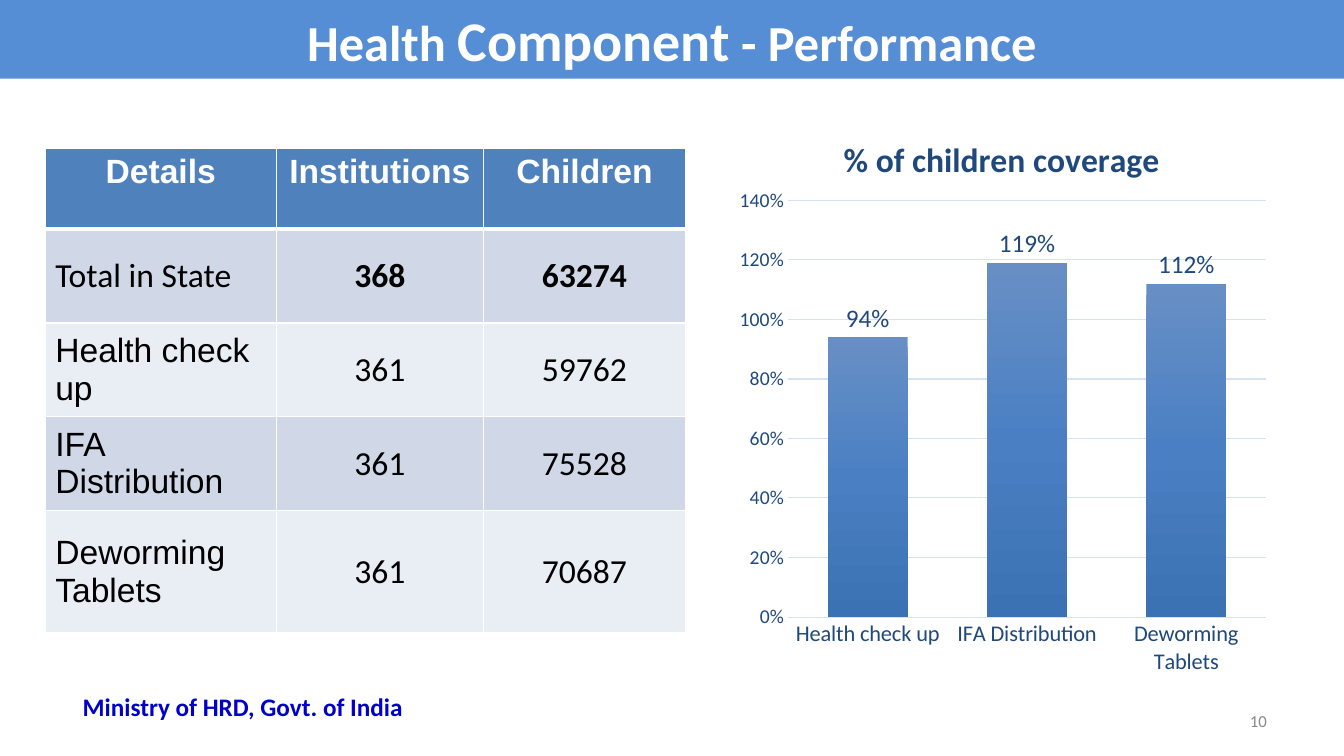
from dataclasses import dataclass
from lxml import etree
from pptx import Presentation
from pptx.chart.data import CategoryChartData
from pptx.dml.color import RGBColor
from pptx.enum.chart import XL_CHART_TYPE, XL_LABEL_POSITION, XL_TICK_MARK
from pptx.enum.text import MSO_ANCHOR, PP_ALIGN
from pptx.oxml import parse_xml
from pptx.oxml.ns import nsdecls, qn
from pptx.util import Cm, Pt

LEFT, CENTER, RIGHT = PP_ALIGN.LEFT, PP_ALIGN.CENTER, PP_ALIGN.RIGHT
TOP, MIDDLE = MSO_ANCHOR.TOP, MSO_ANCHOR.MIDDLE
COLUMN = XL_CHART_TYPE.COLUMN_CLUSTERED
OUTSIDE = XL_LABEL_POSITION.OUTSIDE_END
NO_TICK = XL_TICK_MARK.NONE


@dataclass(frozen=True)
class Theme:
    sans: str = "Calibri"
    arial: str = "Arial"
    white: str = "FFFFFF"
    black: str = "000000"
    banner: str = "558ED5"
    head: str = "4F81BD"
    bands: tuple = ("D0D8E8", "E9EDF4")
    navy: str = "1F497D"
    grid: str = "D4E3F4"
    blue: str = "0000CC"
    gray: str = "898989"
    ramp: tuple = ("688FC5", "4A80C3", "3B72B3")
    title: int = 36
    big: int = 40
    body: int = 24
    label: int = 18
    cat: int = 16
    tick: int = 14
    page: int = 12


T = Theme()
HEADS = ("Details", "Institutions", "Children")
ROWS = (
    ("Total in State", "368", "63274"),
    ("Health check up", "361", "59762"),
    ("IFA Distribution", "361", "75528"),
    ("Deworming Tablets", "361", "70687"),
)
SHARES = (0.94, 1.19, 1.12)


def rgb(code):
    return RGBColor.from_string(code)


def style(font, size, color, face=T.sans, bold=False):
    font.size, font.name, font.bold = Pt(size), face, bold
    font.color.rgb = rgb(color)


def add_run(para, text, *look, **more):
    run = para.add_run()
    run.text = text
    style(run.font, *look, **more)


def set_box(shape, box):
    shape.left, shape.top, shape.width, shape.height = map(Cm, box)


def add_banner(slide, box):
    title = slide.shapes.title
    set_box(title, box)
    title.fill.solid()
    title.fill.fore_color.rgb = rgb(T.banner)
    title.text_frame.vertical_anchor = MIDDLE
    para = title.text_frame.paragraphs[0]
    para.alignment = CENTER
    for text, size in (("Health ", T.title), ("Component", T.big),
                       (" - Performance", T.title)):
        add_run(para, text, size, T.white, bold=True)


def add_note(slide, box, text, align, anchor, *look, **more):
    frame = slide.shapes.add_textbox(*map(Cm, box)).text_frame
    frame.word_wrap = True
    frame.vertical_anchor = anchor
    para = frame.paragraphs[0]
    para.alignment = align
    add_run(para, text, *look, **more)


def add_edges(cell, foot):
    props = cell._tc.get_or_add_tcPr()
    widths = {"L": 1, "R": 1, "T": 1, "B": foot}
    for at, (side, width) in enumerate(widths.items()):
        props.insert(at, parse_xml(
            f'<a:ln{side} {nsdecls("a")} w="{Pt(width)}"><a:solidFill>'
            f'<a:srgbClr val="{T.white}"/></a:solidFill></a:ln{side}>'))


def fill_cell(cell, text, row, col):
    head, first = row == 0, col == 0
    cell.fill.solid()
    cell.fill.fore_color.rgb = rgb(T.head if head else T.bands[(row - 1) % 2])
    cell.vertical_anchor = TOP if head else MIDDLE
    if not head and not first:
        cell.margin_left = cell.margin_right = cell.margin_top = Cm(0.02)
        cell.margin_bottom = 0
    para = cell.text_frame.paragraphs[0]
    para.alignment = CENTER if head or not first else LEFT
    arial = head or (first and row > 1)
    add_run(para, text, T.body, T.white if head else T.black,
            face=T.arial if arial else T.sans,
            bold=head or (row == 1 and not first))
    add_edges(cell, 3 if row < 1 else 1)


def add_grid(slide, box):
    data = (HEADS,) + ROWS
    table = slide.shapes.add_table(len(data), len(HEADS), *map(Cm, box)).table
    for col, width in zip(table.columns, (5.82, 5.23, 5.08)):
        col.width = Cm(width)
    for row, height in zip(table.rows, (2.05, 2.36, 2.36, 2.36, 3.09)):
        row.height = Cm(height)
    for r, line in enumerate(data):
        for c, text in enumerate(line):
            fill_cell(table.cell(r, c), text, r, c)


def place(node, x, y, w=None, h=None, inner=False):
    """Give a chart part a fixed place, as shares of the chart."""
    for old in node.findall(qn("c:layout")):
        node.remove(old)
    layout = parse_xml(f'<c:layout {nsdecls("c")}><c:manualLayout/></c:layout>')
    parts = [("layoutTarget", "inner")] if inner else []
    parts += [("xMode", "edge"), ("yMode", "edge"), ("x", x), ("y", y)]
    parts += [("w", w), ("h", h)] if w else []
    for tag, val in parts:
        etree.SubElement(layout[0], qn("c:" + tag)).set("val", str(val))
    text = node.find(qn("c:tx"))
    node.insert(0 if text is None else 1, layout)


def shade(series):
    series.format.fill.gradient()
    stops = "".join(f'<a:gs pos="{i * 50000}"><a:srgbClr val="{c}"/></a:gs>'
                    for i, c in enumerate(T.ramp))
    props = series._element.spPr
    props.replace(props.find(qn("a:gradFill")), parse_xml(
        f'<a:gradFill {nsdecls("a")} rotWithShape="1"><a:gsLst>{stops}</a:gsLst>'
        '<a:lin ang="5400000" scaled="0"/></a:gradFill>'))


def add_bars(slide, box):
    data = CategoryChartData(number_format="0%")
    data.categories = [row[0] for row in ROWS[1:]]
    data.add_series("Series 1", SHARES)
    chart = slide.shapes.add_chart(COLUMN, *map(Cm, box), data).chart
    style(chart.font, T.tick, T.navy)
    chart.has_legend = False

    # Title
    chart.has_title = True
    title = chart.chart_title
    title.include_in_layout = False
    add_run(title.text_frame.paragraphs[0], "% of children coverage",
            T.body, T.navy, bold=True)
    place(title._element, 0.2, 0.04)

    # Axes
    cats, vals = chart.category_axis, chart.value_axis
    for axis, size in ((cats, T.cat), (vals, T.tick)):
        axis.major_tick_mark = axis.minor_tick_mark = NO_TICK
        style(axis.tick_labels.font, size, T.navy)
    vals.minimum_scale, vals.maximum_scale, vals.major_unit = 0, 1.4, 0.2
    vals.tick_labels.number_format = "0%"
    vals.tick_labels.number_format_is_linked = False
    vals.format.line.fill.background()
    vals.has_major_gridlines = True
    for line in (cats.format.line, vals.major_gridlines.format.line):
        line.color.rgb = rgb(T.grid)
        line.width = Pt(0.75)

    # Bars
    plot = chart.plots[0]
    plot.gap_width, plot.overlap, plot.vary_by_categories = 100, -24, False
    shade(plot.series[0])
    plot.has_data_labels = True
    labels = plot.data_labels
    labels.show_value = True
    labels.position = OUTSIDE
    labels.number_format = "0%"
    labels.number_format_is_linked = False
    style(labels.font, T.label, T.navy)
    area = chart._chartSpace.chart.plotArea
    place(area, 0.11, 0.16, 0.87, 0.72, inner=True)


def main():
    deck = Presentation()
    deck.slide_width, deck.slide_height = Cm(33.87), Cm(19.05)
    slide = deck.slides.add_slide(deck.slide_layouts[5])
    add_banner(slide, (0, -0.02, 33.87, 2))
    add_note(slide, (24.28, 17.65, 7.9, 1.02), "10", RIGHT, MIDDLE,
             T.page, T.gray)
    add_note(slide, (1.14, 17.3, 9.96, 1.02), "Ministry of HRD, Govt. of India",
             CENTER, TOP, T.label, T.blue, bold=True)
    add_grid(slide, (1.14, 3.73, 16.13, 12.22))
    add_bars(slide, (18.34, 2.72, 13.84, 14.58))
    deck.save("out.pptx")


if __name__ == "__main__":
    main()
